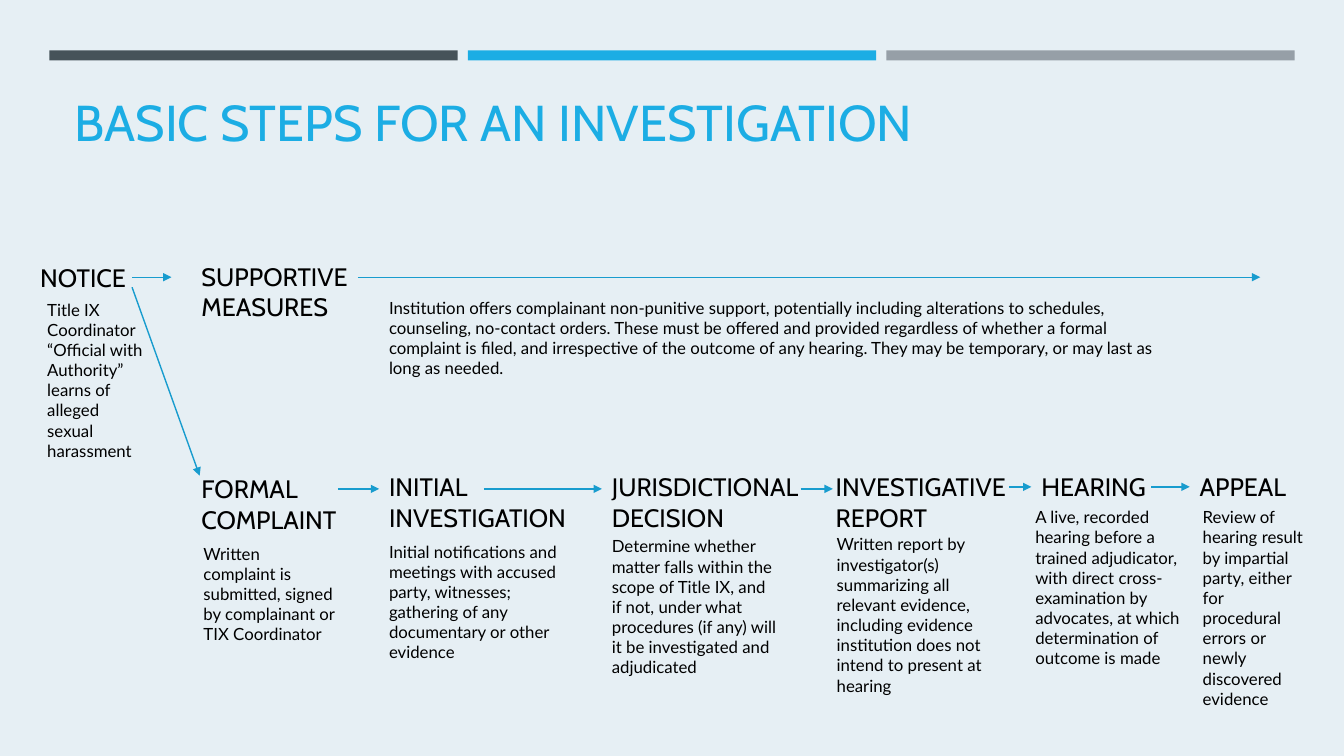
from lxml import etree
from pptx import Presentation
from pptx.dml.color import RGBColor
from pptx.enum.shapes import MSO_CONNECTOR, MSO_SHAPE
from pptx.enum.text import MSO_ANCHOR, MSO_AUTO_SIZE
from pptx.oxml.ns import qn
from pptx.util import Emu, Pt

STRAIGHT = MSO_CONNECTOR.STRAIGHT
RECT = MSO_SHAPE.RECTANGLE
TOP, BOTTOM = MSO_ANCHOR.TOP, MSO_ANCHOR.BOTTOM
GROW = MSO_AUTO_SIZE.SHAPE_TO_FIT_TEXT
LEFT_SIDE = 1

SCALE = 9144  # 100 px to the inch


def px(n):
    return Emu(n * SCALE)


def rgb(value):
    return RGBColor.from_string(value)


class Deck:
    HEAD, BODY = "Cabin", "Lato"
    INK, ACCENT, ARROW, PAPER = "000000", "1CADE4", "189CCE", "E6EFF4"

    def __init__(self, prs):
        self.s = prs.slides.add_slide(prs.slide_layouts[6])
        fill = self.s.background.fill
        fill.solid()
        fill.fore_color.rgb = rgb(self.PAPER)

    def bar(self, x, y, w, h, color):
        sp = self.s.shapes.add_shape(RECT, px(x), px(y), px(w), px(h))
        sp.shadow.inherit = False
        sp.fill.solid()
        sp.fill.fore_color.rgb = rgb(color)
        sp.line.fill.background()

    def text(self, box, lines, font, size, color=INK, anchor=TOP):
        sp = self.s.shapes.add_textbox(*map(px, box))
        tf = sp.text_frame
        tf.word_wrap = True
        tf.vertical_anchor = anchor
        tf.text = lines
        for p in tf.paragraphs:
            p.font.name = font
            p.font.size = Pt(size)
            p.font.color.rgb = rgb(color)
        return sp

    def title(self, box, words, bottom_inset):
        sp = self.text(box, words, self.HEAD, 36, self.ACCENT, BOTTOM)
        sp.text_frame.margin_bottom = px(bottom_inset)

    def heading(self, box, words):
        sp = self.text(box, words, self.HEAD, 18)
        sp.text_frame.auto_size = GROW
        return sp

    def body(self, box, words):
        sp = self.text(box, words, self.BODY, 12)
        sp.text_frame.auto_size = GROW

    def arrow(self, x1, y1, x2, y2, target=None):
        c = self.s.shapes.add_connector(STRAIGHT, px(x1), px(y1), px(x2), px(y2))
        c.line.color.rgb = rgb(self.ARROW)
        c.line.width = Pt(1)
        etree.SubElement(c.line._get_or_add_ln(), qn("a:tailEnd"), type="triangle")
        etree.SubElement(c._element.spPr, qn("a:effectLst"))
        if target is not None:
            c.end_connect(target, LEFT_SIDE)


# Each step: heading box, heading, body box, body
STEPS = [
    ((30, 255, 140, 41), "NOTICE", (37, 292, 119, 172),
     "Title IX Coordinator “Official with Authority” learns of alleged "
     "sexual harassment"),
    ((190, 254, 172, 71), "SUPPORTIVE MEASURES", (376, 290, 799, 71),
     "Institution offers complainant non-punitive support, potentially "
     "including alterations to schedules, counseling, no-contact orders. "
     "These must be offered and provided regardless of whether a formal "
     "complaint is filed, and irrespective of the outcome of any hearing. "
     "They may be temporary, or may last as long as needed."),
    ((190, 465, 172, 71), "FORMAL COMPLAINT", (192, 534, 150, 111),
     "Written complaint is submitted, signed by complainant or TIX Coordinator"),
    ((376, 463, 208, 71), "INITIAL INVESTIGATION", (376, 532, 192, 131),
     "Initial notifications and meetings with accused party, witnesses; "
     "gathering of any documentary or other evidence"),
    ((597, 463, 208, 71), "JURISDICTIONAL\nDECISION", (597, 527, 185, 151),
     "Determine whether matter falls within the scope of Title IX, and if "
     "not, under what procedures (if any) will it be investigated and "
     "adjudicated"),
    ((819, 463, 192, 71), "INVESTIGATIVE REPORT", (820, 525, 180, 172),
     "Written report by investigator(s) summarizing all relevant evidence, "
     "including evidence institution does not intend to present at hearing"),
    ((1023, 463, 140, 40), "HEARING", (1017, 498, 163, 172),
     "A live, recorded hearing before a trained adjudicator, with direct "
     "cross-examination by advocates, at which determination of outcome is "
     "made"),
    ((1180, 463, 140, 40), "APPEAL", (1183, 498, 121, 192),
     "Review of hearing result by impartial party, either for procedural "
     "errors or newly discovered evidence"),
]

# Each arrow: start, end, and the heading it is joined to, if any
ARROWS = [
    (131, 275, 170, 275, None),
    (131, 285, 198, 472, None),
    (355, 275, 1250, 275, None),
    (335, 485, 376, 485, None),
    (480, 485, 597, 485, None),
    (794, 485, 826, 485, None),
    (1001, 483, 1023, 483, "HEARING"),
    (1142, 483, 1180, 483, "APPEAL"),
]


def main():
    prs = Presentation()
    prs.slide_width, prs.slide_height = px(1333), px(750)
    deck = Deck(prs)

    # Top bars
    for i, color in enumerate(("465359", Deck.ACCENT, "969FA7")):
        deck.bar(49 + 415 * i, 50, 405, 10, color)

    # Title
    deck.title((64, 63, 1168, 130), "BASIC STEPS FOR AN INVESTIGATION", 43)

    # Steps
    headings = {}
    for head_box, head, body_box, body in STEPS:
        headings[head] = deck.heading(head_box, head)
        deck.body(body_box, body)

    # Arrows
    for x1, y1, x2, y2, target in ARROWS:
        deck.arrow(x1, y1, x2, y2, headings.get(target))

    prs.save("out.pptx")


if __name__ == "__main__":
    main()
